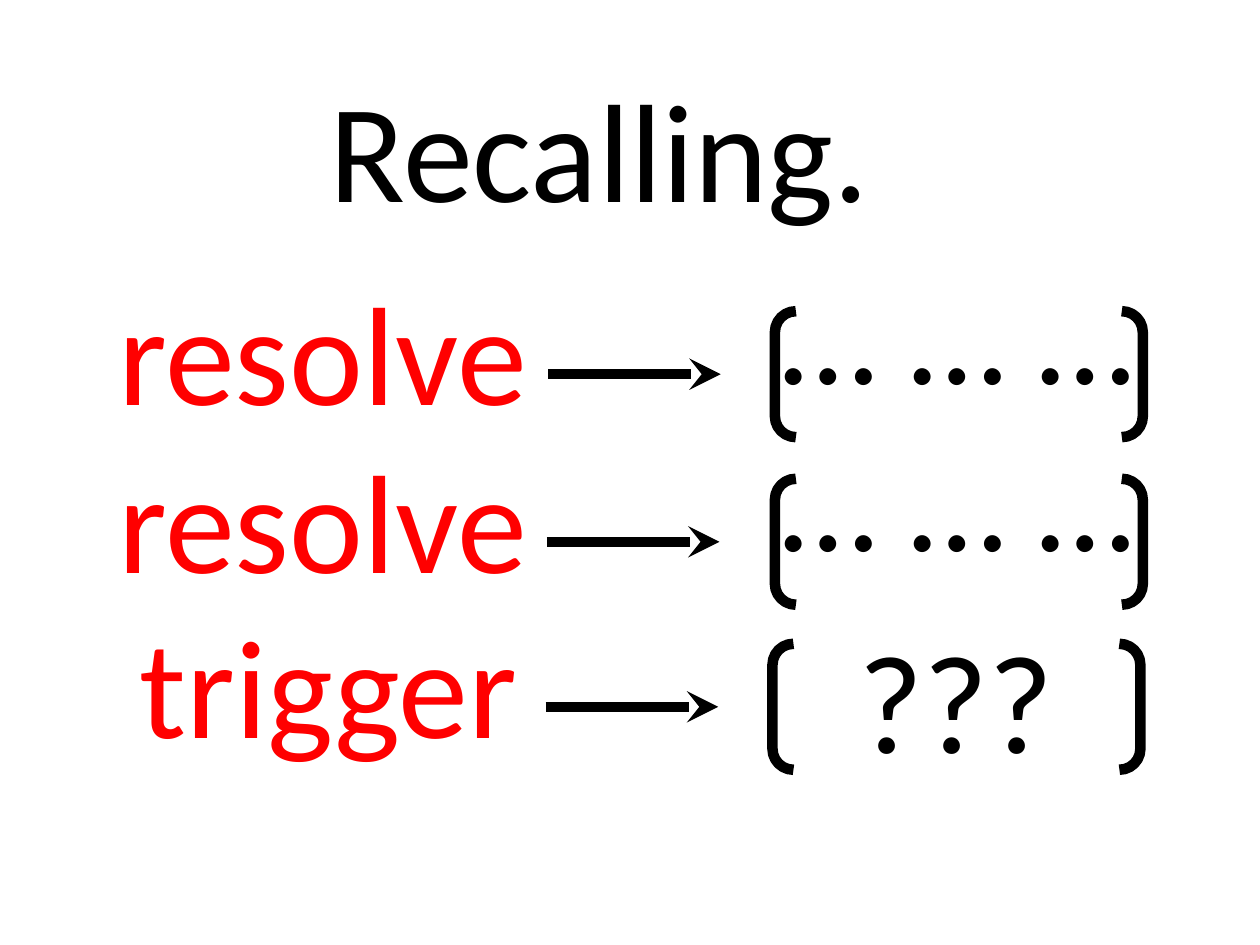
from pptx import Presentation
from pptx.dml.color import RGBColor
from pptx.enum import shapes, text
from pptx.oxml import ns, xmlchemy
from pptx.util import Pt

COLORS = {"ink": "000000", "word": "FF0000"}
FONT = "Calibri"
TEXT_HEIGHT = 104.4
STROKE = 6

# Arrow height, word, word left and width, arrow left, bracket left,
# answer, answer left and width, answer rise above the arrow
ROWS = [
    (213.84, "resolve", 60.5, 252, 313.2, 442.8, "… … …", 439.2, 218.2, 77.8),
    (309.6, "resolve", 60.5, 252, 312.5, 442.8, "… … …", 439.2, 218.2, 77.8),
    (403.92, "trigger", 72.7, 232.6, 311.8, 441.4, "???", 483.8, 126.7, 56.9),
]


def add_text(page, content, left, top, width, color="ink", size=80):
    box = page.shapes.add_textbox(Pt(left), Pt(top), Pt(width), Pt(TEXT_HEIGHT))
    frame = box.text_frame
    frame.word_wrap = False
    frame.auto_size = text.MSO_AUTO_SIZE.NONE
    span = frame.paragraphs[0].add_run()
    span.text = content
    span.font.name = FONT
    span.font.size = Pt(size)
    span.font.color.rgb = RGBColor.from_string(COLORS[color])


def style_line(line):
    line.color.rgb = RGBColor.from_string(COLORS["ink"])
    line.width = Pt(STROKE)


def add_arrow(page, left, y, length=98.64):
    arrow = page.shapes.add_connector(
        shapes.MSO_CONNECTOR.STRAIGHT, Pt(left), Pt(y), Pt(left + length), Pt(y))
    style_line(arrow.line)
    head = xmlchemy.OxmlElement("a:tailEnd")
    head.set("type", "stealth")
    properties = arrow.element.spPr
    properties.find(ns.qn("a:ln")).append(head)
    properties.append(xmlchemy.OxmlElement("a:effectLst"))


def add_brackets(page, left, middle, width=210.24, height=72):
    brackets = page.shapes.add_shape(
        shapes.MSO_SHAPE.DOUBLE_BRACKET,
        Pt(left), Pt(middle - height / 2), Pt(width), Pt(height))
    brackets.shadow.inherit = False
    brackets.fill.background()
    style_line(brackets.line)


def add_row(page, y, word, word_left, word_width, arrow_left, bracket_left,
            answer, answer_left, answer_width, answer_rise):
    """Draw a word, its arrow and the bracketed answer around height y."""
    add_text(page, word, word_left, y - 65.7, word_width, color="word")
    add_arrow(page, arrow_left, y)
    add_brackets(page, bracket_left, y)
    add_text(page, answer, answer_left, y - answer_rise, answer_width)


def main():
    deck = Presentation()
    deck.slide_width, deck.slide_height = Pt(720), Pt(540)
    page = deck.slides.add_slide(deck.slide_layouts[6])
    add_text(page, "Recalling.", 181.4, 32.4, 327.6)
    for row in ROWS:
        add_row(page, *row)
    deck.save("out.pptx")


if __name__ == "__main__":
    main()
